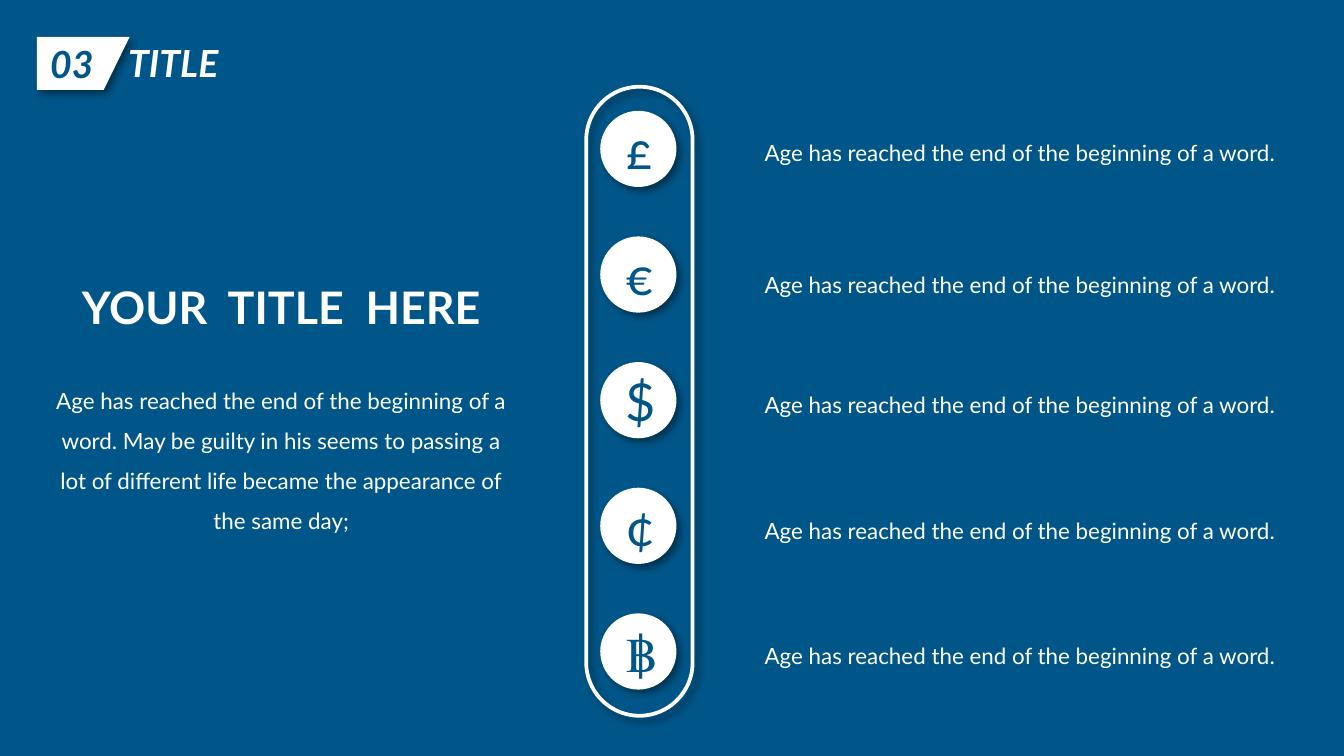
from dataclasses import dataclass

from lxml.etree import SubElement
from pptx import Presentation
from pptx.dml.color import RGBColor
from pptx.enum.shapes import MSO_SHAPE
from pptx.enum.text import MSO_ANCHOR, PP_ALIGN
from pptx.oxml.ns import qn
from pptx.util import Cm, Pt


@dataclass(frozen=True)
class Theme:
    """Colours, fonts and type sizes of the slide."""
    blue: RGBColor = RGBColor(0x00, 0x56, 0x88)
    white: RGBColor = RGBColor(0xFF, 0xFF, 0xFF)
    font: str = "Lato"
    symbol_font: str = "Calibri"
    section: Pt = Pt(20)
    heading: Pt = Pt(24)
    symbol: Pt = Pt(28)
    body: Pt = Pt(12)
    outline: Pt = Pt(2)


THEME = Theme()
SENTENCE = "Age has reached the end of the beginning of a word."
SUMMARY = (SENTENCE + " May be guilty in his seems to passing a lot of "
           "different life became the appearance of the same day;")
ITEMS = [
    ("£", THEME.symbol_font, 2.26),
    ("€", THEME.symbol_font, 4.75),
    ("$", THEME.font, 7.01),
    ("¢", THEME.font, 9.4),
    ("฿", THEME.font, 11.76),
]
CIRCLE_TOP, CIRCLE_STEP = 2.13, 2.375


def write(shape, text, size, color=THEME.white, font=THEME.font,
          align=PP_ALIGN.CENTER, bold=False, italic=False, spacing=None):
    """Put one formatted paragraph into a shape."""
    frame = shape.text_frame
    frame.word_wrap = True
    frame.text = text
    para = frame.paragraphs[0]
    para.alignment = align
    para.line_spacing = spacing
    span = para.runs[0].font
    span.name, span.size, span.bold, span.italic = font, size, bold, italic
    span.color.rgb = color


def add_text(page, left, top, width, height, text, size, **style):
    """Add a text box placed in centimetres."""
    box = page.shapes.add_textbox(Cm(left), Cm(top), Cm(width), Cm(height))
    write(box, text, size, **style)


def add_shadow(shape):
    """Give a shape a soft shadow to the lower right."""
    shape.shadow.inherit = False
    effects = shape._element.spPr.find(qn("a:effectLst"))
    shadow = SubElement(effects, qn("a:outerShdw"), blurRad=str(Pt(4)),
                        dist=str(Pt(3)), dir="2700000", algn="tl", rotWithShape="0")
    color = SubElement(shadow, qn("a:srgbClr"), val="000000")
    SubElement(color, qn("a:alpha"), val="40000")


def add_outlined(page, kind, left, top, width, height):
    """Add a preset shape with a white outline and a shadow."""
    shape = page.shapes.add_shape(kind, Cm(left), Cm(top), Cm(width), Cm(height))
    shape.line.color.rgb = THEME.white
    shape.line.width = THEME.outline
    add_shadow(shape)
    return shape


def add_section_tag(page):
    """Add the slanted number tag and the section title."""
    builder = page.shapes.build_freeform(Cm(0.7), Cm(0.7))
    corners = [(2.45, 0.7), (1.96, 1.7), (0.7, 1.7)]
    builder.add_line_segments([(Cm(x), Cm(y)) for x, y in corners], close=True)
    tag = builder.convert_to_shape()
    tag.fill.solid()
    tag.fill.fore_color.rgb = THEME.white
    tag.line.fill.background()
    add_shadow(tag)
    tag.text_frame.vertical_anchor = MSO_ANCHOR.MIDDLE
    write(tag, "03", THEME.section, color=THEME.blue,
          align=PP_ALIGN.LEFT, bold=True, italic=True)
    add_text(page, 2.08, 0.64, 2.39, 1.11, "TITLE", THEME.section,
             bold=True, italic=True)


def add_capsule(page):
    """Add the tall rounded frame around the circles."""
    capsule = add_outlined(page, MSO_SHAPE.ROUNDED_RECTANGLE, 11.08, 1.64, 2.01, 11.89)
    capsule.adjustments[0] = 0.5
    capsule.fill.background()


def add_circle(page, top, symbol, font):
    """Add a white circle with a currency symbol."""
    circle = add_outlined(page, MSO_SHAPE.OVAL, 11.38, top, 1.37, 1.37)
    circle.fill.solid()
    circle.fill.fore_color.rgb = THEME.white
    circle.text_frame.vertical_anchor = MSO_ANCHOR.MIDDLE
    write(circle, symbol, THEME.symbol, color=THEME.blue, font=font)


def main():
    """Build the slide and save it."""
    deck = Presentation()
    deck.slide_width, deck.slide_height = Cm(25.4), Cm(14.29)
    page = deck.slides.add_slide(deck.slide_layouts[6])
    page.background.fill.solid()
    page.background.fill.fore_color.rgb = THEME.blue

    add_section_tag(page)
    add_text(page, 0.69, 5.16, 9.25, 1.27, "YOUR  TITLE  HERE", THEME.heading, bold=True)
    add_text(page, 0.69, 6.93, 9.25, 3.33, SUMMARY, THEME.body, spacing=1.5)
    add_capsule(page)
    for index, (symbol, font, text_top) in enumerate(ITEMS):
        add_circle(page, CIRCLE_TOP + index * CIRCLE_STEP, symbol, font)
        add_text(page, 14.2, text_top, 10.52, 1.02, SENTENCE, THEME.body,
                 align=PP_ALIGN.LEFT, spacing=1.5)
    deck.save("out.pptx")


if __name__ == "__main__":
    main()
